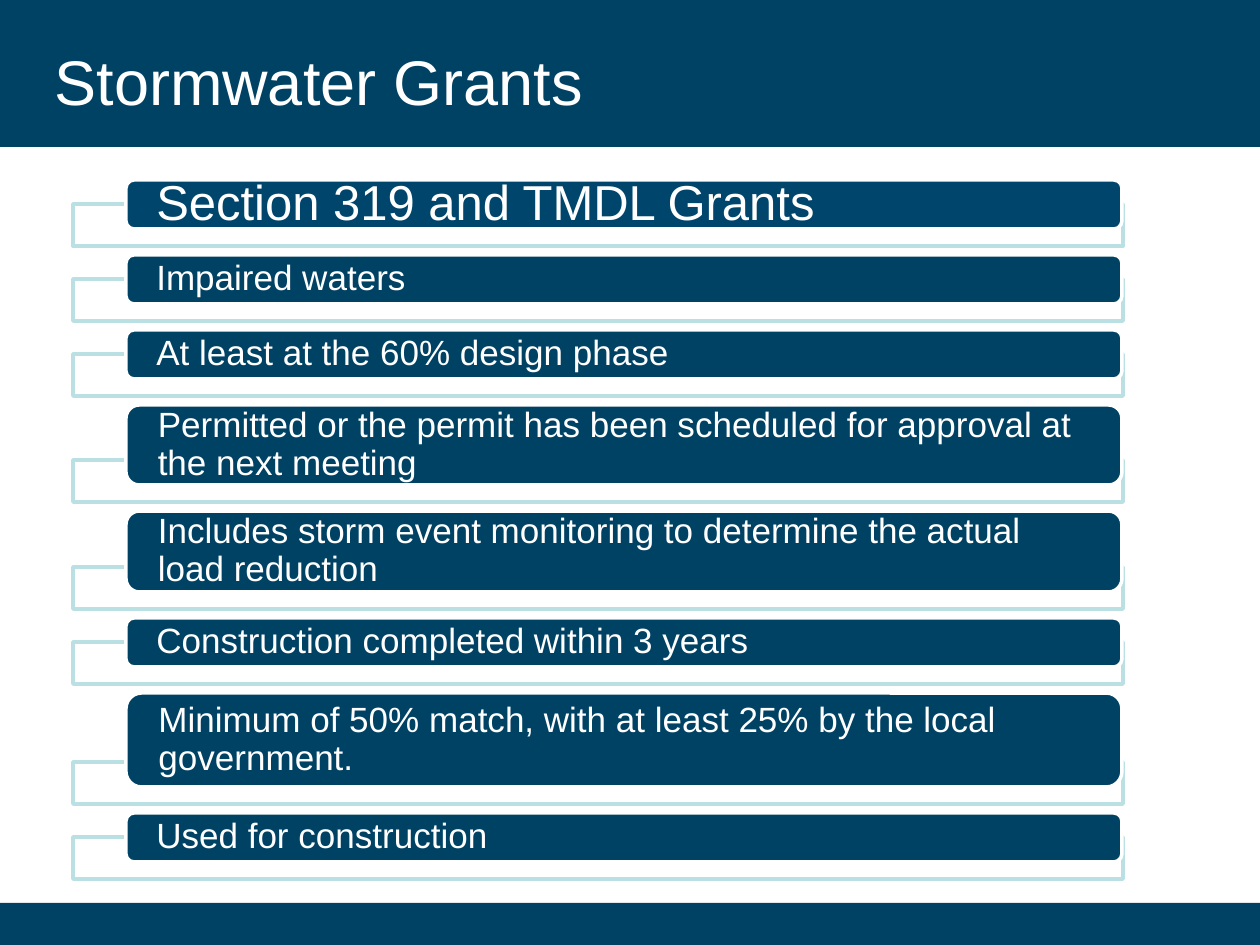
from lxml.etree import SubElement
from pptx import Presentation
from pptx.dml.color import RGBColor
from pptx.enum.shapes import MSO_SHAPE as SHAPE
from pptx.enum.text import MSO_ANCHOR as ANCHOR, PP_ALIGN as ALIGN
from pptx.oxml.ns import qn
from pptx.util import Emu, Pt

NAVY = RGBColor(0x00, 0x42, 0x64)
BLUE = RGBColor(0x00, 0x45, 0x6C)
PALE = RGBColor(0xBB, 0xE0, 0xE3)
WHITE = RGBColor(0xFF, 0xFF, 0xFF)

PX_PER_INCH = 126
WIDTH, HEIGHT = 1260, 945


def px(n):
    return Emu(round(n * 914400 / PX_PER_INCH))


class Deck:
    font = "Arial"

    def __init__(self):
        self.prs = Presentation()
        self.prs.slide_width, self.prs.slide_height = px(WIDTH), px(HEIGHT)
        self.slide = self.prs.slides.add_slide(self.prs.slide_layouts[5])

    def shape(self, kind, x, y, w, h, fill, line=None):
        sp = self.slide.shapes.add_shape(kind, px(x), px(y), px(w), px(h))
        sp.shadow.inherit = False
        sp.fill.solid()
        sp.fill.fore_color.rgb = fill
        if line is None:
            sp.line.fill.background()
        else:
            sp.line.color.rgb = line
            sp.line.width = Pt(2)
        return sp

    def set_text(self, sp, text, size):
        tf = sp.text_frame
        tf.text = text
        tf.word_wrap = True
        tf.vertical_anchor = ANCHOR.MIDDLE
        p = tf.paragraphs[0]
        p.alignment = ALIGN.LEFT
        font = p.runs[0].font
        font.name, font.size, font.color.rgb = self.font, Pt(size), WHITE
        return tf

    def band(self, y, h):
        """Full-width band, sent behind the placeholders."""
        sp = self.shape(SHAPE.RECTANGLE, 0, y, WIDTH, h, NAVY)
        self.slide.shapes.element.insert(2, sp.element)

    def title(self, text, x, y, w, h):
        sp = self.slide.shapes.title
        sp.left, sp.top, sp.width, sp.height = px(x), px(y), px(w), px(h)
        self.set_text(sp, text, 36)

    def frame(self, x, y, w, h):
        sp = self.shape(SHAPE.RECTANGLE, x, y, w, h, WHITE, PALE)
        color = sp.element.spPr.find(qn("a:solidFill"))[0]
        SubElement(color, qn("a:alpha"), val="90000")

    def bar(self, text, x, y, w, h, fill, size):
        sp = self.shape(SHAPE.ROUNDED_RECTANGLE, x, y, w, h, fill, WHITE)
        tf = self.set_text(sp, text, size)
        tf.margin_left = tf.margin_right = px(28)
        tf.margin_top = tf.margin_bottom = 0
        tf.paragraphs[0].line_spacing = 0.9


# Text and bar height of each list entry
GRANT_ITEMS = [
    ("Section 319 and TMDL Grants", 49),
    ("Impaired waters", 49),
    ("At least at the 60% design phase", 49),
    ("Permitted or the permit has been scheduled for approval at "
     "the next meeting", 80),
    ("Includes storm event monitoring to determine the actual "
     "load reduction", 81),
    ("Construction completed within 3 years", 49),
    ("Minimum of 50% match, with at least 25% by the local government.", 94),
    ("Used for construction", 49),
]
GAP = 26
OVERLAP = 25  # how far each bar reaches down into its frame


def main():
    deck = Deck()

    # Header and footer
    deck.band(0, 147)
    deck.band(903, 42)
    deck.title("Stormwater Grants", 42, 22, 935, 116)

    # Stacked list: a pale frame behind each bar
    y = 180
    for i, (text, h) in enumerate(GRANT_ITEMS):
        fill, size = (BLUE, 28) if i == 0 else (NAVY, 20)
        deck.frame(73, y + h - OVERLAP, 1050, 42)
        deck.bar(text, 126, y, 996, h, fill, size)
        y += h + GAP

    deck.prs.save("out.pptx")


if __name__ == "__main__":
    main()
